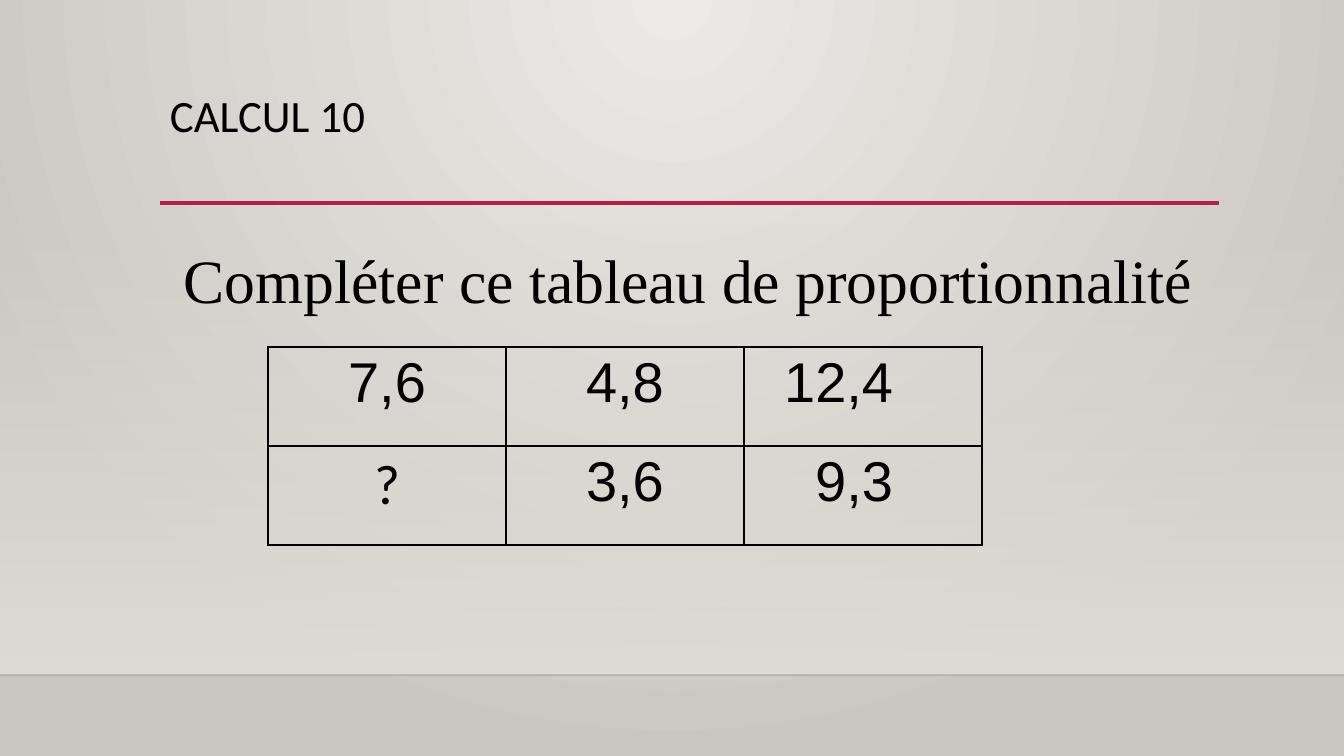
"""Build the slide CALCUL 10: a proportionality table to complete."""
from lxml.etree import SubElement
from pptx import Presentation
from pptx.dml.color import RGBColor as RGB
from pptx.enum.shapes import MSO_CONNECTOR as CONN, MSO_SHAPE as SHAPE
from pptx.enum.text import MSO_ANCHOR as ANCHOR, PP_ALIGN as ALIGN
from pptx.oxml.ns import qn
from pptx.util import Emu, Pt

THEME = {
    "ink": RGB.from_string("000000"),
    "rule": RGB.from_string("B71E42"),
    "horizon": RGB.from_string("000001"),
    "glow": RGB.from_string("ECEAE7"),
    "edge": RGB.from_string("CAC7C1"),
    "wall": RGB.from_string("DFDBD5"),
    "title": ("Calibri", 32),
    "task": ("Times New Roman", 44),
    "number": ("Arial", 40),
    "unknown": ("Calibri", 40),
}


def px(n):
    return Emu(round(n * 914400 / 100.8))


def write(tf, text, style, align, spacing=1.0):
    p = tf.paragraphs[0]
    p.alignment, p.line_spacing = align, spacing
    r = p.add_run()
    r.text = text
    name, size = THEME[style]
    for key, value in {"name": name, "size": Pt(size)}.items():
        setattr(r.font, key, value)
    r.font.color.rgb = THEME["ink"]


prs = Presentation()
prs.slide_width, prs.slide_height = px(1344), px(756)
s = prs.slides.add_slide(prs.slide_layouts[6])

fill = s.background.fill
fill.gradient()
for stop, color in zip(fill.gradient_stops, ("glow", "edge")):
    stop.color.rgb = THEME[color]
grad = s._element.find(".//" + qn("a:gradFill"))
grad.remove(grad.find(qn("a:lin")))
circle = SubElement(grad, qn("a:path"), path="circle")
SubElement(circle, qn("a:fillToRect"), l="43000", t="0", r="43000", b="100000")

wall = s.shapes.add_shape(SHAPE.RECTANGLE, px(0), px(223), px(1344), px(452))
wall.shadow.inherit = False
wall.line.fill.background()
wall.fill.gradient()
wall.fill.gradient_angle = 270
for stop in wall.fill.gradient_stops:
    stop.color.rgb = THEME["wall"]
clear = wall._element.find(".//" + qn("a:gs")).find(qn("a:srgbClr"))
SubElement(clear, qn("a:alpha"), val="0")

for x1, x2, y, color, width, alpha in (
    (0, 1344, 675, "horizon", 1, 20),
    (160, 1219, 203, "rule", 2.5, 100),
):
    line = s.shapes.add_connector(CONN.STRAIGHT, px(x1), px(y), px(x2), px(y))
    line.line.color.rgb = THEME[color]
    line.line.width = Pt(width)
    SubElement(line._element.spPr, qn("a:effectLst"))
    if alpha < 100:
        ink = line._element.find(".//" + qn("a:srgbClr"))
        SubElement(ink, qn("a:alpha"), val=str(alpha * 1000))

for text, style, top, height, align, spacing in (
    ("CALCUL 10", "title", 89, 116, ALIGN.LEFT, 0.9),
    ("Compléter ce tableau de proportionnalité", "task", 222, 380, ALIGN.CENTER, 1.2),
):
    tf = s.shapes.add_textbox(px(160), px(top), px(1058), px(height)).text_frame
    tf.word_wrap, tf.vertical_anchor = True, ANCHOR.TOP
    write(tf, text, style, align, spacing)

rows = (("7,6", "4,8", "12,4"), ("?", "3,6", "9,3"))
frame = s.shapes.add_table(2, 3, px(268), px(347), px(714), px(198))
table = frame.table
for row, values in zip(table.rows, rows):
    row.height = px(99)
    for col, (cell, text) in enumerate(zip(row.cells, values)):
        last = col == 2
        style = "unknown" if text == "?" else "number"
        write(cell.text_frame, text, style, ALIGN.RIGHT if last else ALIGN.CENTER)
        if last:
            cell.margin_right = px(89)
        tcPr = cell._tc.get_or_add_tcPr()
        for side in ("lnL", "lnR", "lnT", "lnB"):
            border = SubElement(tcPr, qn("a:" + side), w=str(Pt(0.96)))
            solid = SubElement(border, qn("a:solidFill"))
            SubElement(solid, qn("a:srgbClr"), val=str(THEME["ink"]))
        cell.fill.background()

prs.save("out.pptx")
